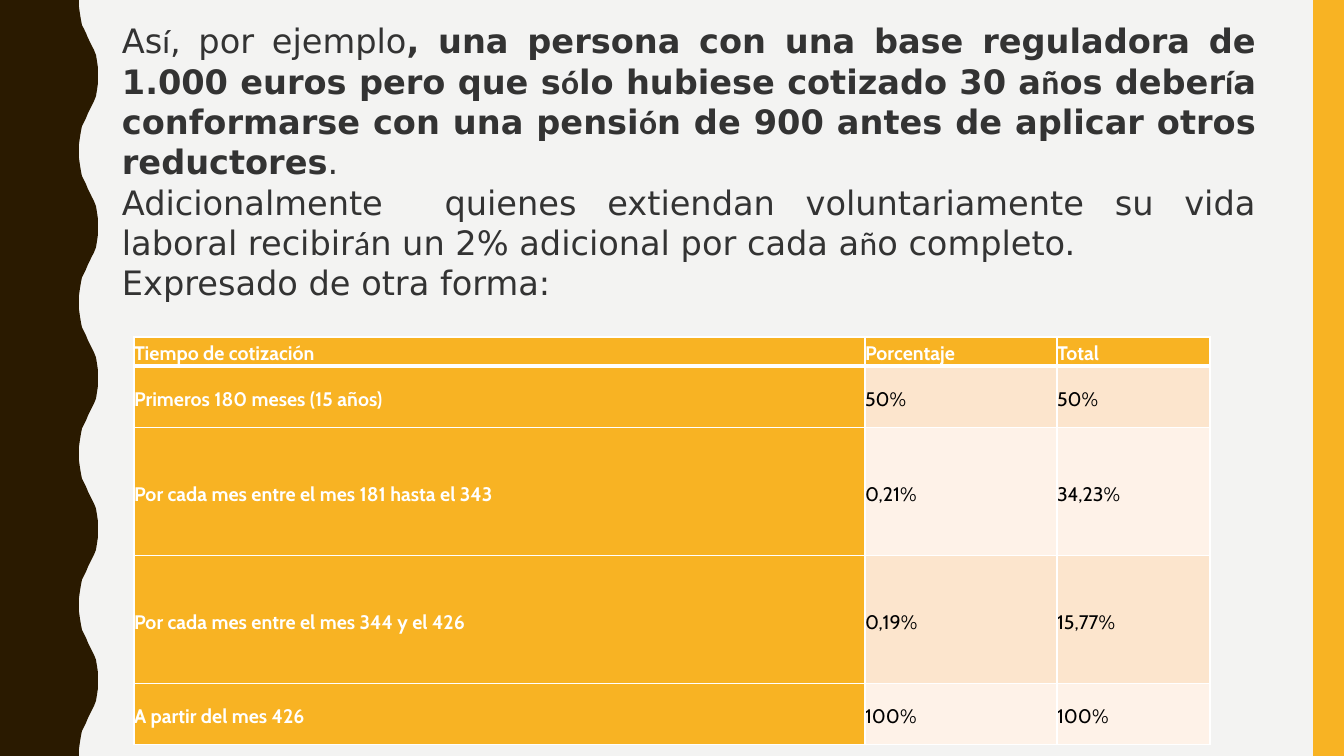
from itertools import groupby

from lxml.etree import SubElement
from pptx import Presentation
from pptx.dml.color import RGBColor
from pptx.enum.shapes import MSO_SHAPE
from pptx.enum.text import MSO_ANCHOR, MSO_AUTO_SIZE, PP_ALIGN
from pptx.oxml.ns import qn
from pptx.util import Pt

SCALE = 12192000 / 1344
WIDTH, HEIGHT = 1344, 756

PAPER = RGBColor(0xF3, 0xF3, 0xF2)
BROWN = RGBColor(0x2A, 0x1A, 0x00)
GOLD = RGBColor(0xF8, 0xB3, 0x23)
PEACH = RGBColor(0xFC, 0xE5, 0xCD)
CREAM = RGBColor(0xFE, 0xF2, 0xE8)
WHITE = RGBColor(0xFF, 0xFF, 0xFF)
BLACK = RGBColor(0x00, 0x00, 0x00)
GREY = RGBColor(0x33, 0x33, 0x33)

WAVES = 5
BEND = [(79, 0), (79, 7), (80, 14), (81, 20), (82, 25), (84, 29), (86, 33),
        (88, 38), (90, 42), (92, 46), (94, 50), (96, 55), (97, 61), (98, 68)]

# Each paragraph is a list of (text, bold) parts.
STORY = [
    [("Así, por ejemplo", False),
     (", una persona con una base reguladora de 1.000 euros pero que sólo "
      "hubiese cotizado 30 años debería conformarse con una pensión de 900 "
      "antes de aplicar otros reductores", True),
     (". ", False)],
    [("Adicionalmente  quienes extiendan voluntariamente su vida laboral "
      "recibirán un 2% adicional por cada año completo.", False)],
    [("Expresado de otra forma:", False)],
]

COLS = [731, 192, 153]
ROWS = [28, 62, 128, 128, 61]
RATES = [
    ("Tiempo de cotización", "Porcentaje", "Total"),
    ("Primeros 180 meses (15 años)", "50%", "50%"),
    ("Por cada mes entre el mes 181 hasta el 343", "0,21%", "34,23%"),
    ("Por cada mes entre el mes 344 y el 426", "0,19%", "15,77%"),
    ("A partir del mes 426", "100%", "100%"),
]


def px(count):
    return round(count * SCALE)


def paint(shape, color):
    shape.shadow.inherit = False
    shape.fill.solid()
    shape.fill.fore_color.rgb = color
    shape.line.fill.background()


def style(run, face, size, color, bold):
    font = run.font
    font.name, font.size, font.bold = face, Pt(size), bold
    font.color.rgb = color


def add_wave(slide):
    """Draw the left band, whose right edge repeats one mirrored bend."""
    step = HEIGHT / WAVES
    curve = BEND + [(x, step - y) for x, y in reversed(BEND)]
    edge = [(px(x), px(wave * step + y)) for wave in range(WAVES) for x, y in curve]
    form = slide.shapes.build_freeform(0, 0)
    form.add_line_segments(edge + [(0, px(HEIGHT))], close=True)
    paint(form.convert_to_shape(), BROWN)


def add_bar(slide, left, width):
    bar = slide.shapes.add_shape(
        MSO_SHAPE.RECTANGLE, px(left), 0, px(width), px(HEIGHT))
    paint(bar, GOLD)


def add_edges(cell, last):
    """Give a cell white borders; last is the bottom width in points."""
    props = cell._tc.get_or_add_tcPr()
    widths = {"a:lnL": 1, "a:lnR": 1, "a:lnT": 1, "a:lnB": last}
    for spot, (tag, width) in enumerate(widths.items()):
        line = SubElement(props, qn(tag), w=str(Pt(width)))
        fill = SubElement(line, qn("a:solidFill"))
        SubElement(fill, qn("a:srgbClr"), val=str(WHITE))
        props.insert(spot, line)


def fill_cell(cell, text, back, strong, last):
    cell.margin_left = cell.margin_right = 0
    cell.margin_top = cell.margin_bottom = 0
    cell.vertical_anchor = MSO_ANCHOR.MIDDLE
    cell.fill.solid()
    cell.fill.fore_color.rgb = back
    add_edges(cell, last)
    cell.text_frame.text = text
    para = cell.text_frame.paragraphs[0]
    para.alignment = PP_ALIGN.JUSTIFY
    para.line_spacing = 1.2
    para.space_after = Pt(7.1)
    style(para.runs[0], "Cabin", 14, WHITE if strong else BLACK, strong)


def add_rates(slide, left, top):
    frame = slide.shapes.add_table(
        len(ROWS), len(COLS), px(left), px(top), px(sum(COLS)), px(sum(ROWS)))
    table = frame.table
    for col, width in zip(table.columns, COLS):
        col.width = px(width)
    for row, height in zip(table.rows, ROWS):
        row.height = px(height)
    for r, texts in enumerate(RATES):
        band = PEACH if r % 2 else CREAM
        for c, text in enumerate(texts):
            strong = r == 0 or c == 0
            fill_cell(table.cell(r, c), text, GOLD if strong else band,
                      strong, 3 if r == 0 else 1)


def add_story(slide, left, top, width, height):
    """Write the text, with accented letters in their own font."""
    box = slide.shapes.add_textbox(px(left), px(top), px(width), px(height))
    frame = box.text_frame
    frame.word_wrap = True
    frame.auto_size = MSO_AUTO_SIZE.SHAPE_TO_FIT_TEXT
    frame.vertical_anchor = MSO_ANCHOR.MIDDLE
    for spot, parts in enumerate(STORY):
        para = frame.add_paragraph() if spot else frame.paragraphs[0]
        para.alignment = PP_ALIGN.JUSTIFY
        for text, bold in parts:
            for plain, chars in groupby(text, str.isascii):
                run = para.add_run()
                run.text = "".join(chars)
                accent = not plain and run.text.strip()
                style(run, "Calibri" if accent else "DejaVu Sans", 24, GREY, bold)


def main():
    deck = Presentation()
    deck.slide_width, deck.slide_height = px(WIDTH), px(HEIGHT)
    slide = deck.slides.add_slide(deck.slide_layouts[6])
    slide.background.fill.solid()
    slide.background.fill.fore_color.rgb = PAPER
    add_wave(slide)
    add_bar(slide, 1313, 31)
    add_rates(slide, 134, 337)
    add_story(slide, 112, 14, 1154, 295)
    deck.save("out.pptx")


if __name__ == "__main__":
    main()
